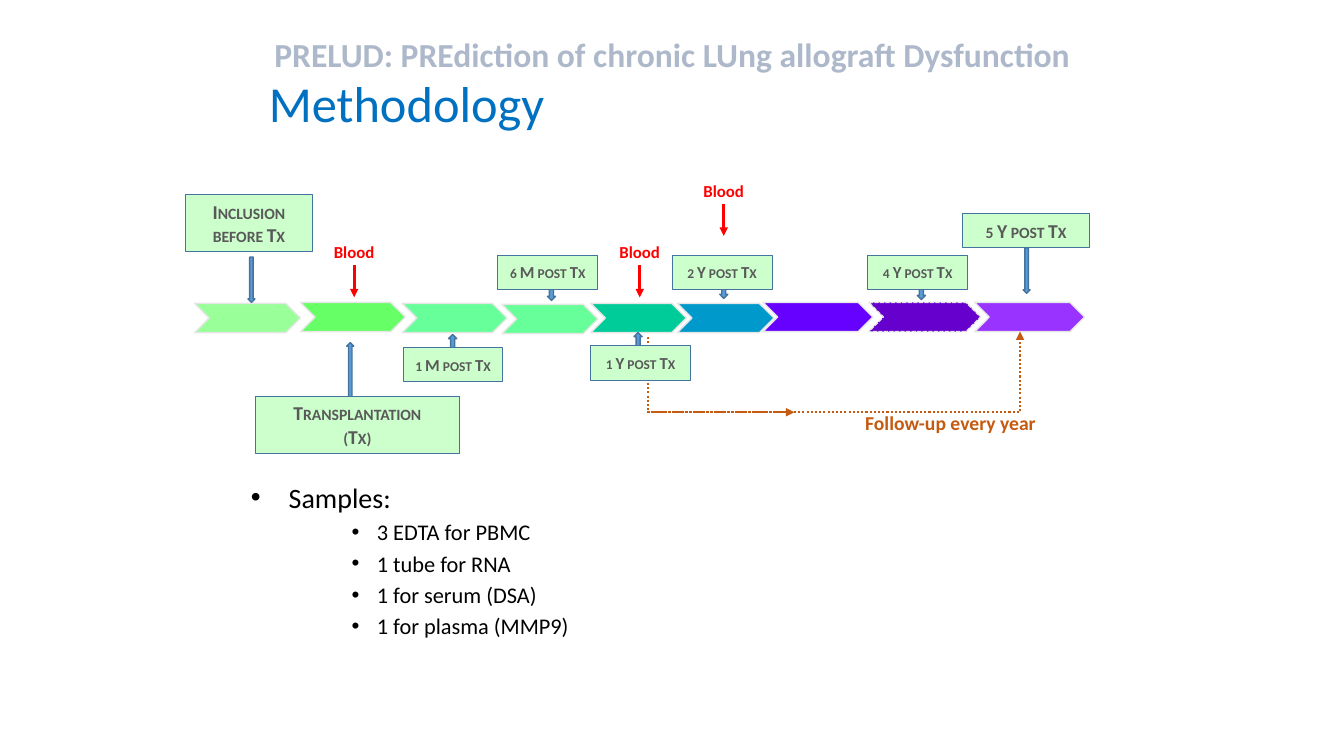
from dataclasses import dataclass

from lxml.etree import SubElement
from pptx import Presentation
from pptx.dml.color import RGBColor
from pptx.enum.dml import MSO_LINE
from pptx.enum.shapes import MSO_CONNECTOR, MSO_SHAPE
from pptx.enum.text import MSO_ANCHOR, MSO_AUTO_SIZE, PP_ALIGN
from pptx.oxml.ns import qn
from pptx.shapes.autoshape import Shape
from pptx.shapes.connector import Connector
from pptx.slide import Slide
from pptx.text.text import TextFrame, _Paragraph
from pptx.util import Pt

FONT = "Calibri"
RED, ORANGE, GREY = "FF0000", "C55A11", "595959"


@dataclass(frozen=True)
class Period:
    left: float
    top: float
    width: float
    color: str
    dashed: bool = False


@dataclass(frozen=True)
class Milestone:
    lines: tuple[str, ...]
    left: float
    top: float
    arrow_left: float
    arrow_top: float
    points_down: bool = True
    width: float = 71.3
    height: float = 24.5
    size: float = 12
    arrow_width: float = 5.8
    arrow_height: float = 20.9


@dataclass(frozen=True)
class BloodSample:
    center: float
    top: float


@dataclass(frozen=True)
class ListLevel:
    size: float
    left: float
    hanging: float
    before: float


PERIODS = (
    Period(139, 216.7, 75.6, "99FF99"),
    Period(214.6, 216, 74.9, "66FF66"),
    Period(287.3, 216.7, 74.9, "66FF99"),
    Period(358.6, 217.4, 68.4, "66FF99"),
    Period(421.9, 216.7, 68.4, "00CC99"),
    Period(483.8, 216.7, 69.1, "0099CC"),
    Period(545, 216, 78.5, "6600FF"),
    Period(620.6, 216, 79.9, "6600CC", dashed=True),
    Period(696.2, 216, 78.5, "9933FF"),
)
MILESTONES = (
    Milestone(("Inclusion", "before Tx"), 132.5, 139, 177.1, 183.6,
              True, 90.7, 41, 14, 5, 32.4),
    Milestone(("Transplantation", "(Tx)"), 182.2, 283, 247.7, 244.8,
              False, 146.2, 41, 14, 5, 41),
    Milestone(("1 M post Tx",), 288, 248.4, 320.4, 239, False),
    Milestone(("6 M post Tx",), 355.7, 182.2, 391, 193.7),
    Milestone(("1 Y post Tx",), 421.9, 247, 452.9, 237.6, False),
    Milestone(("2 Y post Tx",), 480.2, 182.2, 514.1, 192.2),
    Milestone(("4 Y post Tx",), 619.9, 182.2, 655.2, 193),
    Milestone(("5 Y post Tx",), 687.6, 152.6, 730.8, 177.1,
              True, 90.7, 24.5, 14, 5, 32.4),
)
BLOOD_SAMPLES = (BloodSample(253, 169.2), BloodSample(457, 169.2), BloodSample(517, 125.3))
HEADING_LEVEL = ListLevel(20, 27, 27, 0)
TUBE_LEVEL = ListLevel(16, 90, 18, 3.2)
SAMPLES = (
    ("Samples:", HEADING_LEVEL),
    ("3 EDTA for PBMC", TUBE_LEVEL),
    ("1 tube for RNA", TUBE_LEVEL),
    ("1 for serum (DSA)", TUBE_LEVEL),
    ("1 for plasma (MMP9)", TUBE_LEVEL),
)


def rgb(color: str) -> RGBColor:
    return RGBColor.from_string(color)


def write(paragraph: _Paragraph, text: str, size: float, color: str,
          bold: bool = False, small_caps: bool = False) -> None:
    run = paragraph.add_run()
    run.text = text
    run.font.name = FONT
    run.font.size = Pt(size)
    run.font.bold = bold
    run.font.color.rgb = rgb(color)
    if small_caps:
        run.font._element.set("cap", "small")


def add_text(slide: Slide, left: float, top: float, width: float, height: float) -> TextFrame:
    frame = slide.shapes.add_textbox(Pt(left), Pt(top), Pt(width), Pt(height)).text_frame
    frame.word_wrap = True
    return frame


def add_caption(slide: Slide, text: str, left: float, top: float, width: float,
                height: float, size: float, color: str, bold: bool = True) -> None:
    paragraph = add_text(slide, left, top, width, height).paragraphs[0]
    paragraph.alignment = PP_ALIGN.CENTER
    write(paragraph, text, size, color, bold)


def add_block(slide: Slide, kind: MSO_SHAPE, left: float, top: float, width: float,
              height: float, fill: str, line: str, line_width: float = 1) -> Shape:
    block = slide.shapes.add_shape(kind, Pt(left), Pt(top), Pt(width), Pt(height))
    block.shadow.inherit = False
    block.fill.solid()
    block.fill.fore_color.rgb = rgb(fill)
    block.line.color.rgb = rgb(line)
    block.line.width = Pt(line_width)
    return block


def add_arrow(slide: Slide, kind: MSO_CONNECTOR, x1: float, y1: float, x2: float,
              y2: float, color: str, width: float) -> Connector:
    arrow = slide.shapes.add_connector(kind, Pt(x1), Pt(y1), Pt(x2), Pt(y2))
    arrow.line.color.rgb = rgb(color)
    arrow.line.width = Pt(width)
    if kind == MSO_CONNECTOR.ELBOW:
        arrow.line.dash_style = MSO_LINE.ROUND_DOT
    SubElement(arrow.line._get_or_add_ln(), qn("a:tailEnd"), type="triangle")
    SubElement(arrow._element.spPr, qn("a:effectLst"))
    return arrow


def add_title(slide: Slide) -> None:
    title = slide.shapes.title
    title.left, title.top, title.width, title.height = Pt(84.2), Pt(20.9), Pt(792), Pt(82.8)
    frame = title.text_frame
    frame.auto_size = MSO_AUTO_SIZE.NONE
    frame.vertical_anchor = MSO_ANCHOR.TOP
    frame.paragraphs[0].alignment = PP_ALIGN.CENTER
    write(frame.paragraphs[0], "PRELUD: PREdiction of chronic LUng allograft Dysfunction",
          24, "ADB9CA", True)


def add_period(slide: Slide, period: Period) -> None:
    chevron = add_block(slide, MSO_SHAPE.CHEVRON, period.left, period.top, period.width,
                        20.9, period.color, "E6E6E6")
    if period.dashed:
        chevron.line.dash_style = MSO_LINE.SQUARE_DOT


def add_milestone(slide: Slide, stone: Milestone) -> None:
    direction = MSO_SHAPE.DOWN_ARROW if stone.points_down else MSO_SHAPE.UP_ARROW
    add_block(slide, direction, stone.arrow_left, stone.arrow_top, stone.arrow_width,
              stone.arrow_height, "5B9BD5", "43739E")
    label = add_block(slide, MSO_SHAPE.RECTANGLE, stone.left, stone.top, stone.width,
                      stone.height, "CCFFCC", "43739E", 0.75)
    frame = label.text_frame
    frame.word_wrap = True
    frame.margin_left = frame.margin_right = frame.margin_top = frame.margin_bottom = 0
    frame.vertical_anchor = MSO_ANCHOR.MIDDLE
    paragraph = frame.paragraphs[0]
    paragraph.alignment = PP_ALIGN.CENTER
    for index, line in enumerate(stone.lines):
        if index:
            paragraph.add_line_break()
        write(paragraph, line, stone.size, GREY, True, True)


def add_blood_sample(slide: Slide, sample: BloodSample) -> None:
    add_caption(slide, "Blood", sample.center - 34.5, sample.top, 69, 21.6, 12, RED)
    add_arrow(slide, MSO_CONNECTOR.STRAIGHT, sample.center, sample.top + 20.2,
              sample.center, sample.top + 43.2, RED, 2)


def add_follow_up(slide: Slide) -> None:
    yearly = add_arrow(slide, MSO_CONNECTOR.ELBOW, 461.9, 294.5, 728.6, 236.9, ORANGE, 1.5)
    yearly._element.spPr.find(qn("a:prstGeom")).set("prst", "bentConnector2")
    start = add_arrow(slide, MSO_CONNECTOR.ELBOW, 463.7, 241.2, 567.4, 294.5, ORANGE, 1.5)
    bend = start._element.spPr.find(qn("a:prstGeom")).find(qn("a:avLst"))
    SubElement(bend, qn("a:gd"), name="adj1", fmla="val -700")
    add_caption(slide, "Follow-up every year", 591.1, 290.2, 175.7, 24.5, 14, ORANGE)


def add_samples(slide: Slide) -> None:
    frame = add_text(slide, 172.1, 339.5, 760, 180)
    for index, (text, level) in enumerate(SAMPLES):
        paragraph = frame.add_paragraph() if index else frame.paragraphs[0]
        properties = paragraph._p.get_or_add_pPr()
        properties.set("marL", str(Pt(level.left)))
        properties.set("indent", str(-Pt(level.hanging)))
        SubElement(properties, qn("a:buFont"), typeface="Arial")
        SubElement(properties, qn("a:buChar"), char="•")
        paragraph.level = 2 if level is TUBE_LEVEL else 0
        paragraph.space_before = Pt(level.before)
        write(paragraph, text, level.size, "000000")


def main() -> None:
    deck = Presentation()
    deck.slide_width, deck.slide_height = Pt(960), Pt(540)
    slide = deck.slides.add_slide(deck.slide_layouts[5])
    add_title(slide)
    add_caption(slide, "Methodology", 154.8, 48.2, 271.4, 64.8, 36, "0070C0", False)
    for period in PERIODS:
        add_period(slide, period)
    add_follow_up(slide)
    for stone in MILESTONES:
        add_milestone(slide, stone)
    for sample in BLOOD_SAMPLES:
        add_blood_sample(slide, sample)
    add_samples(slide)
    deck.save("out.pptx")


if __name__ == "__main__":
    main()
